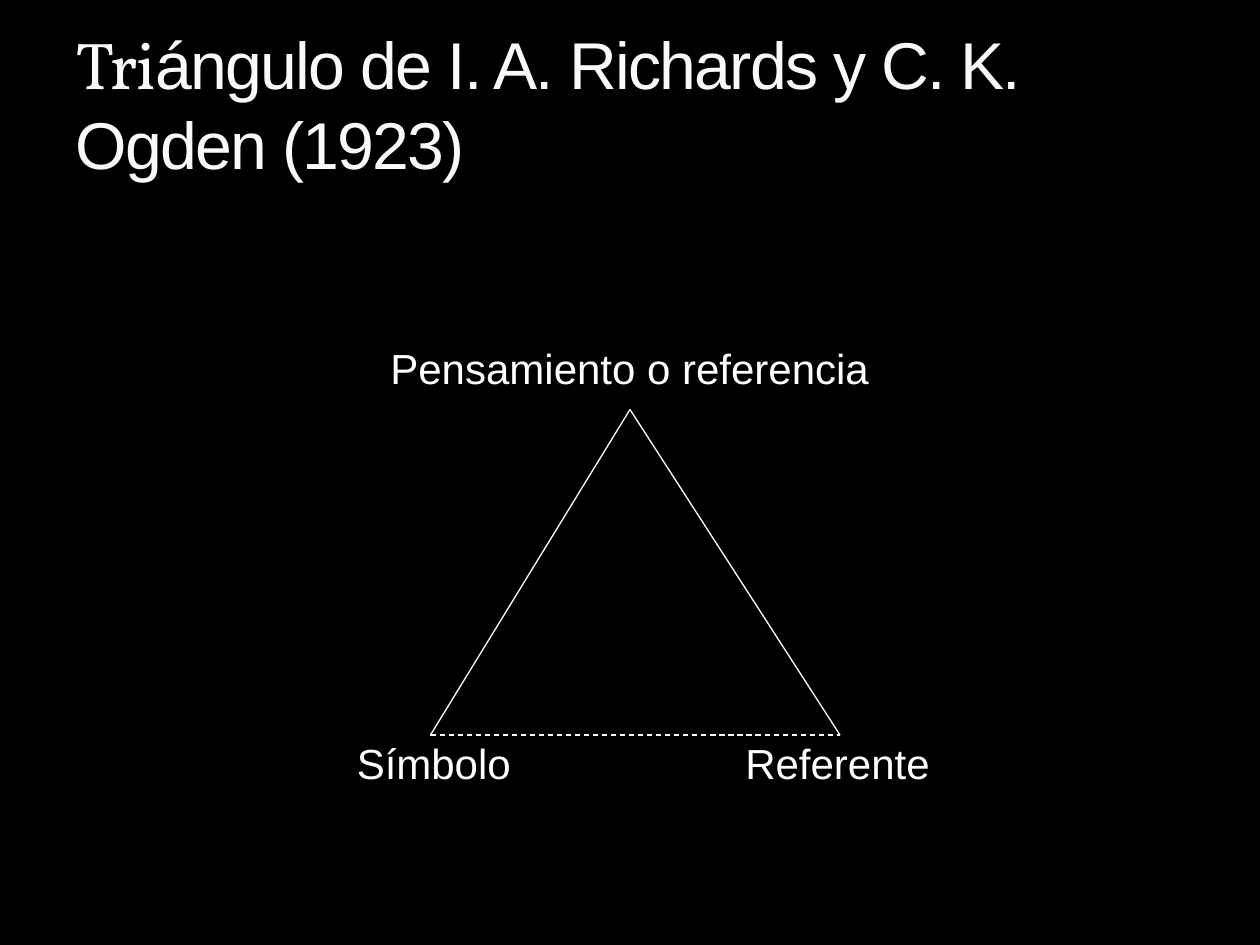
from typing import NamedTuple, Optional

import pptx
import pptx.dml.color
import pptx.enum.dml
import pptx.enum.shapes
import pptx.enum.text
import pptx.oxml
import pptx.oxml.ns
import pptx.util

COLOURS = {
    "background": "000000",
    "title": "F9F9F9",
    "title_edge": "3C4422",
    "diagram": "FFFFFF",
}
COLUMNS, ROWS = 120, 90
SLIDE_WIDTH, SLIDE_HEIGHT = pptx.util.Inches(10), pptx.util.Inches(7.5)
DASH = pptx.enum.dml.MSO_LINE_DASH_STYLE.DASH


class Point(NamedTuple):
    column: float
    row: float


class Box(NamedTuple):
    column: float
    row: float
    columns: float
    rows: float


class Side(NamedTuple):
    start: Point
    end: Point
    dash: Optional[pptx.enum.dml.MSO_LINE_DASH_STYLE] = None


class Label(NamedTuple):
    words: str
    box: Box


THOUGHT, SYMBOL, REFERENT = Point(60, 39), Point(41, 70), Point(80, 70)
SIDES = [
    Side(SYMBOL, THOUGHT),
    Side(THOUGHT, REFERENT),
    Side(SYMBOL, REFERENT, DASH),
]
BASE_ROW = 69.65
LABELS = [
    Label("Pensamiento o referencia", Box(36, 32, 48, 6)),
    Label("Referente", Box(69.8, BASE_ROW, 20.3, 6)),
    Label("Símbolo", Box(32.8, BASE_ROW, 17.3, 6)),
]
TITLE_BOX = Box(6, 2, 108, 16)
TITLE_RUNS = {
    "Tri": "Vollkorn",
    "ángulo de I. A. Richards y C. K. Ogden (1923)": "Arial",
}
TITLE_FRAME = {
    "word_wrap": True,
    "auto_size": pptx.enum.text.MSO_AUTO_SIZE.NONE,
    "vertical_anchor": pptx.enum.text.MSO_ANCHOR.BOTTOM,
}
LABEL_FRAME = {
    "word_wrap": False,
    "auto_size": pptx.enum.text.MSO_AUTO_SIZE.SHAPE_TO_FIT_TEXT,
}


def colour(role: str) -> pptx.dml.color.RGBColor:
    return pptx.dml.color.RGBColor.from_string(COLOURS[role])


def across(columns: float) -> int:
    return round(SLIDE_WIDTH * columns / COLUMNS)


def down(rows: float) -> int:
    return round(SLIDE_HEIGHT * rows / ROWS)


def apply(target, values: dict) -> None:
    for name, value in values.items():
        setattr(target, name, value)


def add_run(paragraph, words: str, face: str, points: float, role: str):
    run = paragraph.add_run()
    run.text = words
    apply(run.font, {"name": face, "size": pptx.util.Pt(points)})
    run.font.color.rgb = colour(role)
    return run


def edge_letters(run) -> None:
    properties = run.font._element
    properties.set("spc", "-100")
    properties.insert(0, pptx.oxml.parse_xml(
        f'<a:ln {pptx.oxml.ns.nsdecls("a")} w="3175"><a:solidFill>'
        f'<a:srgbClr val="{COLOURS["title_edge"]}"><a:alpha val="25000"/></a:srgbClr>'
        '</a:solidFill><a:prstDash val="solid"/></a:ln>'))


def write_title(slide) -> None:
    heading = slide.shapes.title
    apply(heading, {
        "left": across(TITLE_BOX.column),
        "top": down(TITLE_BOX.row),
        "width": across(TITLE_BOX.columns),
        "height": down(TITLE_BOX.rows),
    })
    apply(heading.text_frame, TITLE_FRAME)
    paragraph = heading.text_frame.paragraphs[0]
    paragraph.alignment = pptx.enum.text.PP_ALIGN.LEFT
    for words, face in TITLE_RUNS.items():
        edge_letters(add_run(paragraph, words, face, 37.8, "title"))


def draw_side(slide, side: Side) -> None:
    edge = slide.shapes.add_connector(
        pptx.enum.shapes.MSO_CONNECTOR.STRAIGHT,
        across(side.start.column), down(side.start.row),
        across(side.end.column), down(side.end.row))
    edge.line.color.rgb = colour("diagram")
    apply(edge.line, {"width": pptx.util.Pt(0.75), "dash_style": side.dash})
    edge._element.spPr.append(pptx.oxml.parse_xml(
        f'<a:effectLst {pptx.oxml.ns.nsdecls("a")}/>'))


def write_label(slide, label: Label) -> None:
    box = label.box
    frame = slide.shapes.add_textbox(
        across(box.column), down(box.row),
        across(box.columns), down(box.rows)).text_frame
    apply(frame, LABEL_FRAME)
    add_run(frame.paragraphs[0], label.words, "Arial", 24, "diagram")


def main() -> None:
    deck = pptx.Presentation()
    apply(deck, {"slide_width": SLIDE_WIDTH, "slide_height": SLIDE_HEIGHT})
    slide = deck.slides.add_slide(deck.slide_layouts.get_by_name("Title Only"))
    slide.background.fill.solid()
    slide.background.fill.fore_color.rgb = colour("background")
    write_title(slide)
    for side in SIDES:
        draw_side(slide, side)
    for label in LABELS:
        write_label(slide, label)
    deck.save("out.pptx")


if __name__ == "__main__":
    main()
